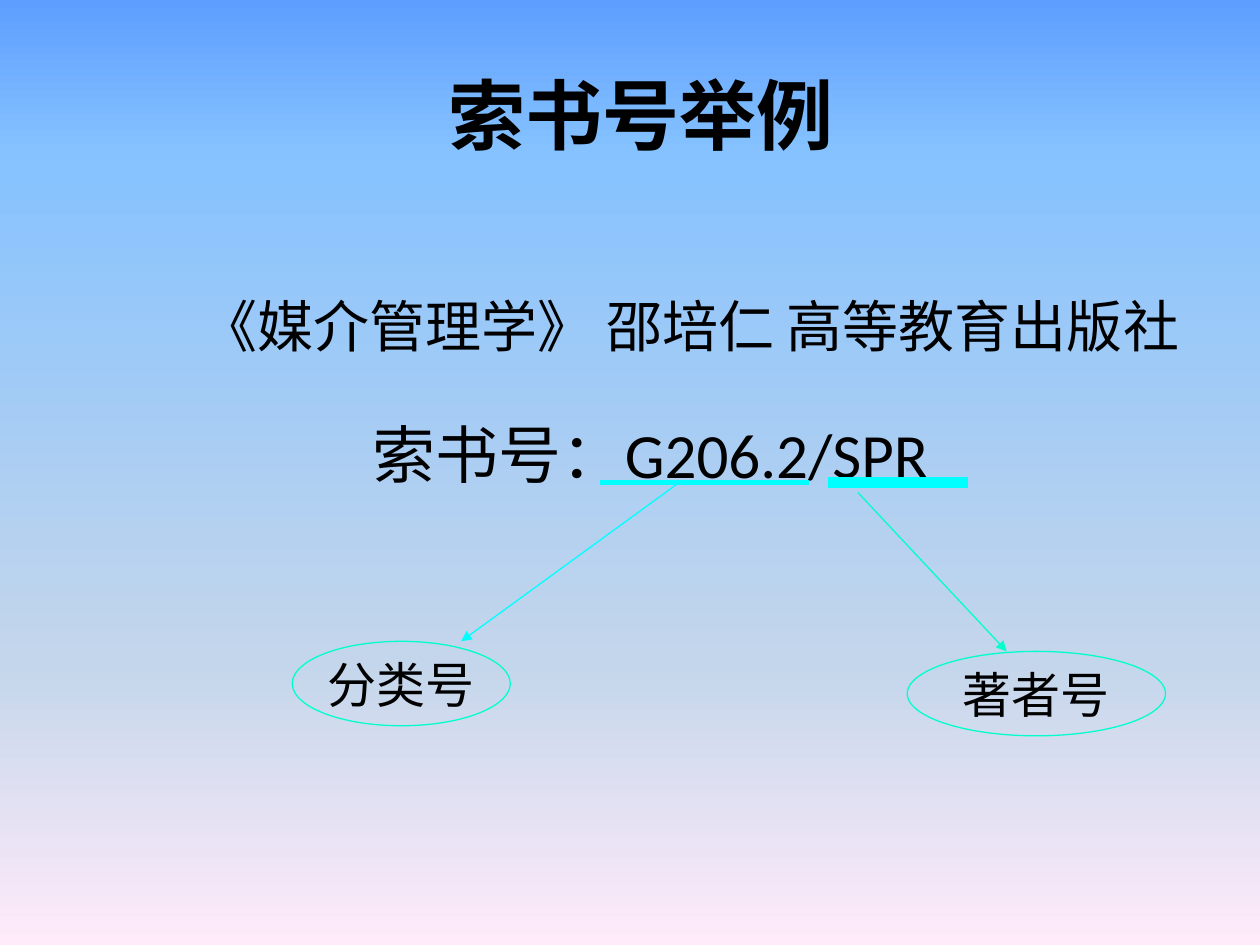
from dataclasses import dataclass

from lxml import etree
from pptx import Presentation
from pptx import util as u
from pptx.dml.color import RGBColor
from pptx.enum import shapes, text
from pptx.oxml.ns import qn

# The slide is a grid of 100 columns by 75 rows
COLUMNS, ROWS = 100, 75
CELL = u.Inches(0.1)


@dataclass(frozen=True)
class Theme:
    font: str = "Calibri"
    ink: str = "000000"
    cyan: str = "00FFFF"
    aqua: str = "00FFCC"
    sky: tuple = ((0, "5E9EFF"), (16, "85C2FF"), (70, "C4D6EB"), (100, "FFEBFA"))
    title: int = 44
    book: int = 32
    call_number: int = 36
    label: int = 28
    thin: float = 0.75


THEME = Theme()


def grid(*cells):
    """Turn columns and rows into lengths."""
    return [round(cell * CELL) for cell in cells]


def set_values(target, values):
    for name, value in values.items():
        setattr(target, name, value)


def paint_background(slide):
    fill = slide.background.fill
    fill.gradient()
    fill.gradient_angle = 270
    stops = slide.element.find(".//" + qn("a:gsLst"))
    stops.clear()
    for share, color in THEME.sky:
        stop = etree.SubElement(stops, qn("a:gs"), pos=str(share * 1000))
        etree.SubElement(stop, qn("a:srgbClr"), val=color)


def place(shape, left, top, width, height):
    lengths = grid(left, top, width, height)
    set_values(shape, dict(zip(("left", "top", "width", "height"), lengths)))


def format_frame(frame, **values):
    set_values(frame, {"word_wrap": True, "auto_size": text.MSO_AUTO_SIZE.NONE,
                       "vertical_anchor": text.MSO_ANCHOR.MIDDLE, **values})


def write(paragraph, words, size, bold=False, **layout):
    paragraph.text = words
    set_values(paragraph, {"space_before": u.Pt(0), **layout})
    set_values(paragraph.font, {"name": THEME.font, "size": u.Pt(size), "bold": bold})
    paragraph.font.color.rgb = RGBColor.from_string(THEME.ink)


def set_line(shape, color, width):
    shape.line.color.rgb = RGBColor.from_string(color)
    shape.line.width = u.Pt(width)


def add_title(slide, words):
    title = slide.shapes.title
    place(title, 5.9, 2.8, 90, 12.5)
    format_frame(title.text_frame)
    write(title.text_frame.paragraphs[0], words, THEME.title, bold=True,
          alignment=text.PP_ALIGN.CENTER)


def add_entry(slide, lines):
    """Fill the body with unbulleted lines, each at its own indent."""
    body = slide.placeholders[1]
    place(body, 9, 22.7, 93.7, 16.7)
    frame = body.text_frame
    format_frame(frame)
    for index, (words, size, indent, gap) in enumerate(lines):
        paragraph = frame.add_paragraph() if index else frame.paragraphs[0]
        properties = paragraph._p.get_or_add_pPr()
        set_values_xml = {"marL": str(grid(indent)[0]), "indent": "0"}
        properties.attrib.update(set_values_xml)
        etree.SubElement(properties, qn("a:buNone"))
        write(paragraph, words, size, space_before=u.Pt(gap))


def add_line(slide, start, end, color, width, arrow=False):
    line = slide.shapes.add_connector(
        shapes.MSO_CONNECTOR.STRAIGHT, *grid(*start, *end))
    set_line(line, color, width)
    if arrow:
        etree.SubElement(line.line._get_or_add_ln(), qn("a:tailEnd"), type="triangle")
    etree.SubElement(line._element.spPr, qn("a:effectLst"))


def add_oval(slide, words, box):
    oval = slide.shapes.add_shape(shapes.MSO_SHAPE.OVAL, *grid(*box))
    oval.shadow.inherit = False
    oval.fill.background()
    set_line(oval, THEME.aqua, THEME.thin)
    sides = ("margin_left", "margin_top", "margin_right", "margin_bottom")
    format_frame(oval.text_frame, **dict.fromkeys(sides, 0))
    write(oval.text_frame.paragraphs[0], words, THEME.label,
          alignment=text.PP_ALIGN.CENTER)


def main():
    presentation = Presentation()
    presentation.slide_width, presentation.slide_height = grid(COLUMNS, ROWS)
    slide = presentation.slides.add_slide(presentation.slide_layouts[1])
    paint_background(slide)

    # Heading, book and call number
    add_title(slide, "索书号举例")
    add_entry(slide, [
        ("《媒介管理学》 邵培仁 高等教育出版社", THEME.book, 6, 0),
        ("索书号：G206.2/SPR", THEME.call_number, 19.6, 32),
    ])

    # Each part of the call number: underline, arrow and label
    underline_row = 38.3
    parts = [
        ("分类号", (47.6, 64.2), 3, (53.9, 38.3), (36.6, 50.9), THEME.cyan,
         (23.2, 50.9, 17.3, 6.7)),
        ("著者号", (65.7, 76.8), 6, (68.1, 39.1), (79.9, 51.7), THEME.aqua,
         (72, 51.7, 20.5, 6.7)),
    ]
    for words, (left, right), weight, start, end, color, box in parts:
        add_line(slide, (left, underline_row), (right, underline_row),
                 THEME.cyan, weight)
        add_line(slide, start, end, color, THEME.thin, arrow=True)
        add_oval(slide, words, box)

    presentation.save("out.pptx")


if __name__ == "__main__":
    main()
